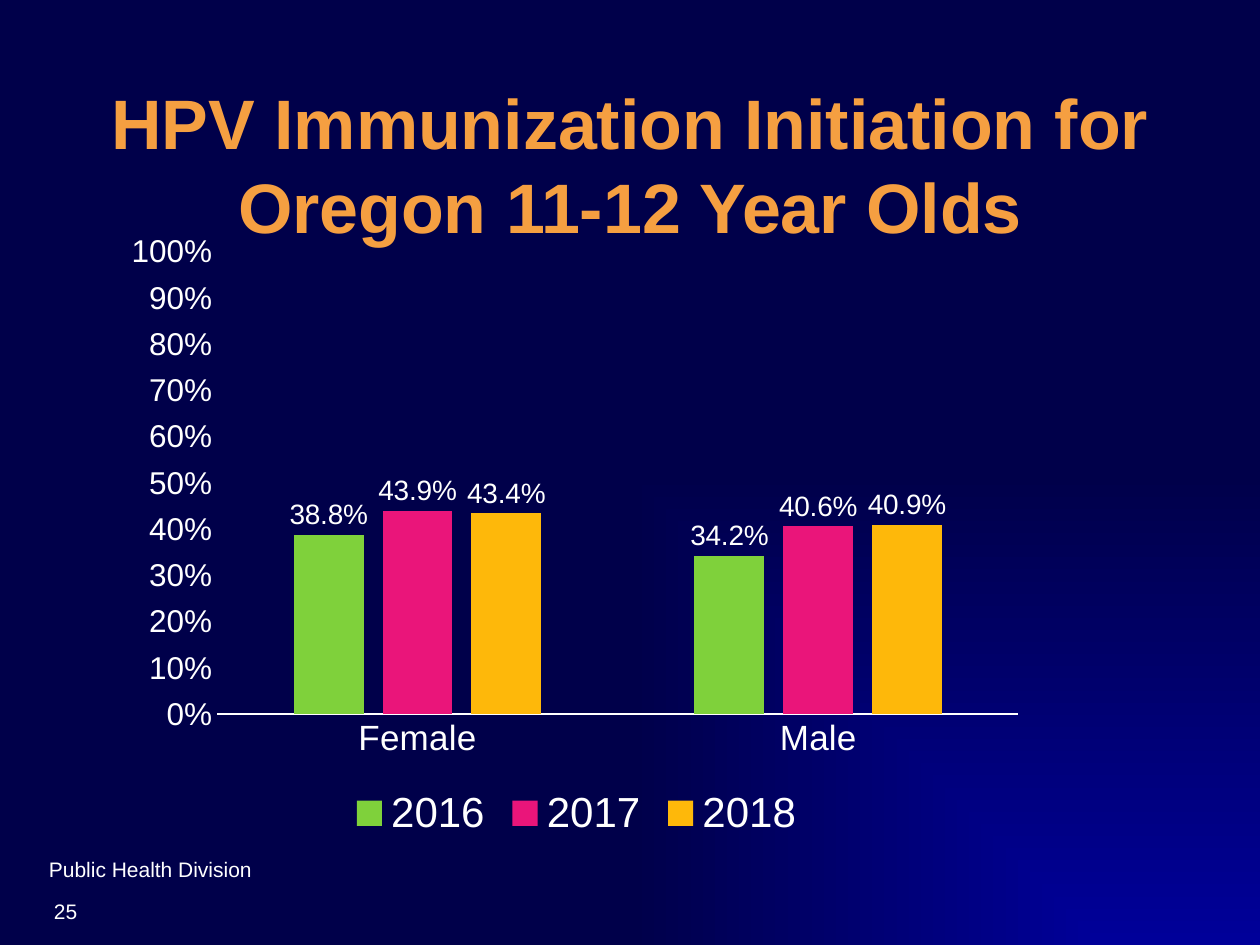
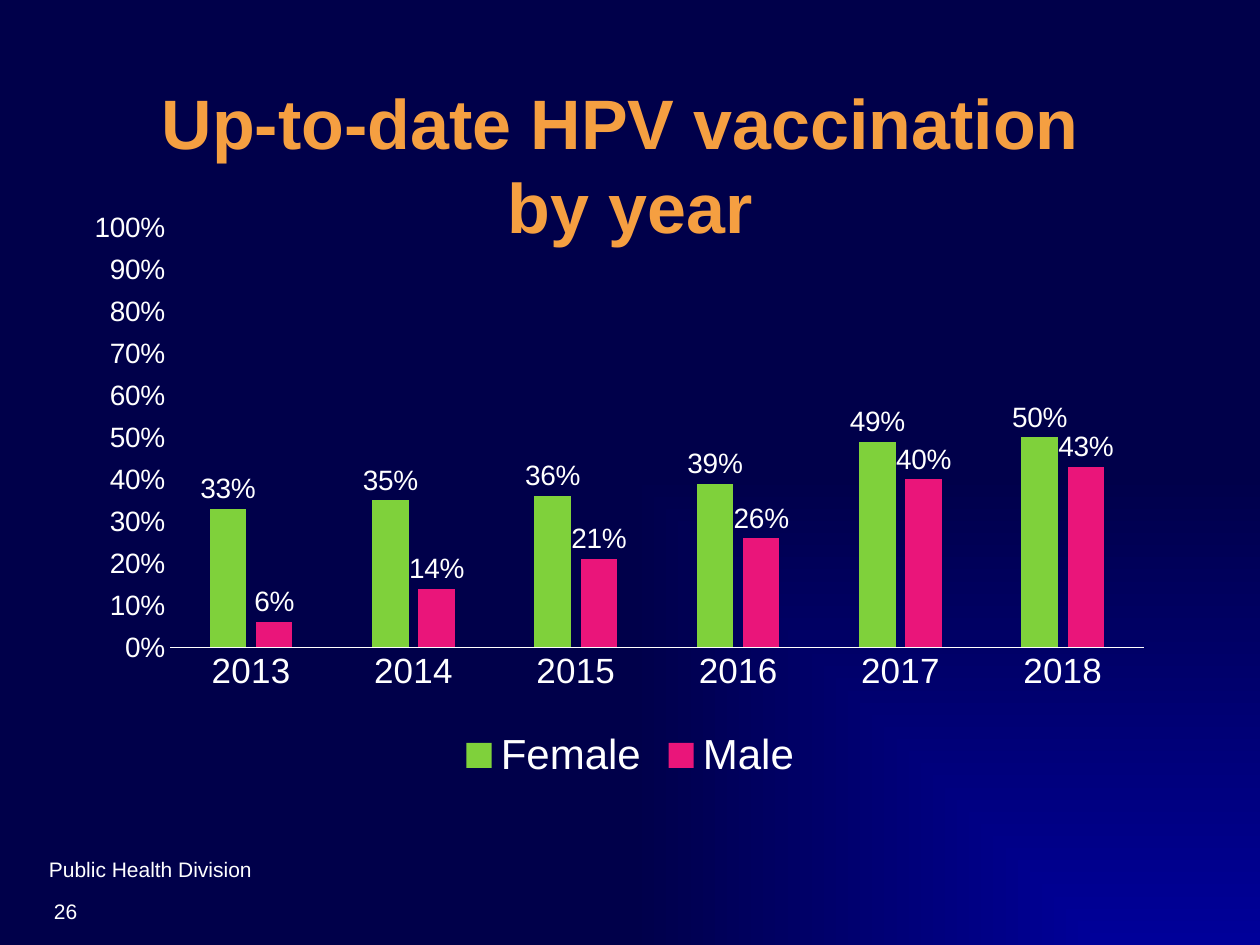
import pptx
import pptx.util
import pptx.chart.data
import pptx.dml.color
import pptx.enum.chart
import pptx.enum.text
import pptx.oxml
import pptx.oxml.ns

Inches, Pt = pptx.util.Inches, pptx.util.Pt
qn = pptx.oxml.ns.qn

FONT = "Arial"
COLORS = {
    "glow": "000099", "night": "00004A", "title": "F59F41", "text": "FFFFFF",
    "green": "7FD13B", "pink": "EA157A", "gold": "FEB80A",
}
FOOTER = "Public Health Division"
FIRST = 25
TITLE_BOX = (0.75, 0.67, 8.5, 1.25)
FOOT_BOX = (0.29, 6.75, 3.83, 0.27)
PAGE_BOX = (0.33, 7.08, 2.08, 0.33)

# "plot" is the inner plot area as fractions of the chart: x, y, w, h
SLIDES = [
    {
        "title": "HPV Immunization Initiation for Oregon 11-12 Year Olds",
        "box": (0.92, 1.75, 7.31, 4.96),
        "plot": (0.11, 0.05, 0.87, 0.74),
        "scale": 18,
        "format": "0.0%",
        "cats": ["Female", "Male"],
        "series": [
            ("2016", "green", (0.388, 0.342)),
            ("2017", "pink", (0.439, 0.406)),
            ("2018", "gold", (0.434, 0.409)),
        ],
    },
    {
        "title": "Up-to-date HPV vaccination \vby year",
        "box": (0.75, 1.42, 8.5, 4.83),
        "plot": (0.07, 0.08, 0.91, 0.69),
        "scale": 16,
        "format": "0%",
        "cats": ["2013", "2014", "2015", "2016", "2017", "2018"],
        "series": [
            ("Female", "green", (0.33, 0.35, 0.36, 0.39, 0.49, 0.50)),
            ("Male", "pink", (0.06, 0.14, 0.21, 0.26, 0.40, 0.43)),
        ],
    },
]


def color(name):
    return pptx.dml.color.RGBColor.from_string(COLORS[name])


def style(font, size, tint="text", bold=False):
    font.name, font.size, font.bold = FONT, Pt(size), bold
    font.color.rgb = color(tint)


def place(shape, box):
    shape.left, shape.top, shape.width, shape.height = map(Inches, box)


def write(shape, text, size=12, tint="text", bold=False, align="LEFT", anchor="TOP"):
    frame = shape.text_frame
    frame.word_wrap = True
    frame.auto_size = pptx.enum.text.MSO_AUTO_SIZE.NONE
    frame.vertical_anchor = getattr(pptx.enum.text.MSO_ANCHOR, anchor)
    frame.text = text
    para = frame.paragraphs[0]
    para.alignment = getattr(pptx.enum.text.PP_ALIGN, align)
    for run in para.runs:
        style(run.font, size, tint, bold)


def paint(master):
    """Give the master a gradient that glows from the lower right corner."""
    fill = master.background.fill
    fill.gradient()
    for stop, name, spot in zip(fill.gradient_stops, ("glow", "night"), (0, 1)):
        stop.color.rgb = color(name)
        stop.position = spot
    grad = master.element.find(".//" + qn("a:gradFill"))
    lin = grad.find(qn("a:lin"))
    grad.replace(lin, pptx.oxml.parse_xml(
        f'<a:path {pptx.oxml.ns.nsdecls("a")} path="rect">'
        '<a:fillToRect l="100000" t="100000"/></a:path>'))


def fix_plot(chart, plot):
    """Pin the inner plot area to fractions of the chart."""
    area = chart.element.find(".//" + qn("c:plotArea"))
    for old in area.findall(qn("c:layout")):
        area.remove(old)
    sizes = "".join(f'<c:{k} val="{v}"/>' for k, v in zip("xywh", plot))
    area.insert(0, pptx.oxml.parse_xml(
        f'<c:layout {pptx.oxml.ns.nsdecls("c")}><c:manualLayout>'
        '<c:layoutTarget val="inner"/><c:xMode val="edge"/><c:yMode val="edge"/>'
        f'{sizes}</c:manualLayout></c:layout>'))


def add_bars(slide, page):
    kinds = pptx.enum.chart
    data = pptx.chart.data.CategoryChartData(number_format=page["format"])
    data.categories = page["cats"]
    for name, _, values in page["series"]:
        data.add_series(name, values)
    chart = slide.shapes.add_chart(
        kinds.XL_CHART_TYPE.COLUMN_CLUSTERED, *map(Inches, page["box"]), data).chart
    style(chart.font, 16)
    chart.has_title = False
    chart.has_legend = True
    chart.legend.position = kinds.XL_LEGEND_POSITION.BOTTOM
    chart.legend.include_in_layout = False
    style(chart.legend.font, 24)

    cats, vals = chart.category_axis, chart.value_axis
    for axis, size in ((cats, 20), (vals, page["scale"])):
        axis.has_major_gridlines = False
        axis.major_tick_mark = axis.minor_tick_mark = kinds.XL_TICK_MARK.NONE
        style(axis.tick_labels.font, size)
    cats.format.line.color.rgb = color("text")
    cats.format.line.width = Pt(0.75)
    vals.format.line.fill.background()
    vals.minimum_scale, vals.maximum_scale, vals.major_unit = 0, 1, 0.1
    vals.tick_labels.number_format = "0%"
    vals.tick_labels.number_format_is_linked = False

    bars = chart.plots[0]
    bars.gap_width, bars.overlap = 219, -27
    bars.vary_by_categories = False
    for series, (_, tint, _) in zip(bars.series, page["series"]):
        series.format.fill.solid()
        series.format.fill.fore_color.rgb = color(tint)
        series.format.line.fill.background()
        labels = series.data_labels
        labels.show_value = True
        labels.number_format = page["format"]
        labels.number_format_is_linked = False
        labels.position = kinds.XL_LABEL_POSITION.OUTSIDE_END
        style(labels.font, 16)
    fix_plot(chart, page["plot"])


def main():
    deck = pptx.Presentation()
    deck.slide_width, deck.slide_height = Inches(10), Inches(7.5)
    paint(deck.slide_master)
    for number, page in enumerate(SLIDES, FIRST):
        slide = deck.slides.add_slide(deck.slide_layouts[5])
        for text, box in ((FOOTER, FOOT_BOX), (str(number), PAGE_BOX)):
            write(slide.shapes.add_textbox(*map(Inches, box)), text)
        title = slide.shapes.title
        place(title, TITLE_BOX)
        write(title, page["title"], size=40, tint="title", bold=True,
              align="CENTER", anchor="MIDDLE")
        add_bars(slide, page)
    deck.save("out.pptx")


if __name__ == "__main__":
    main()
